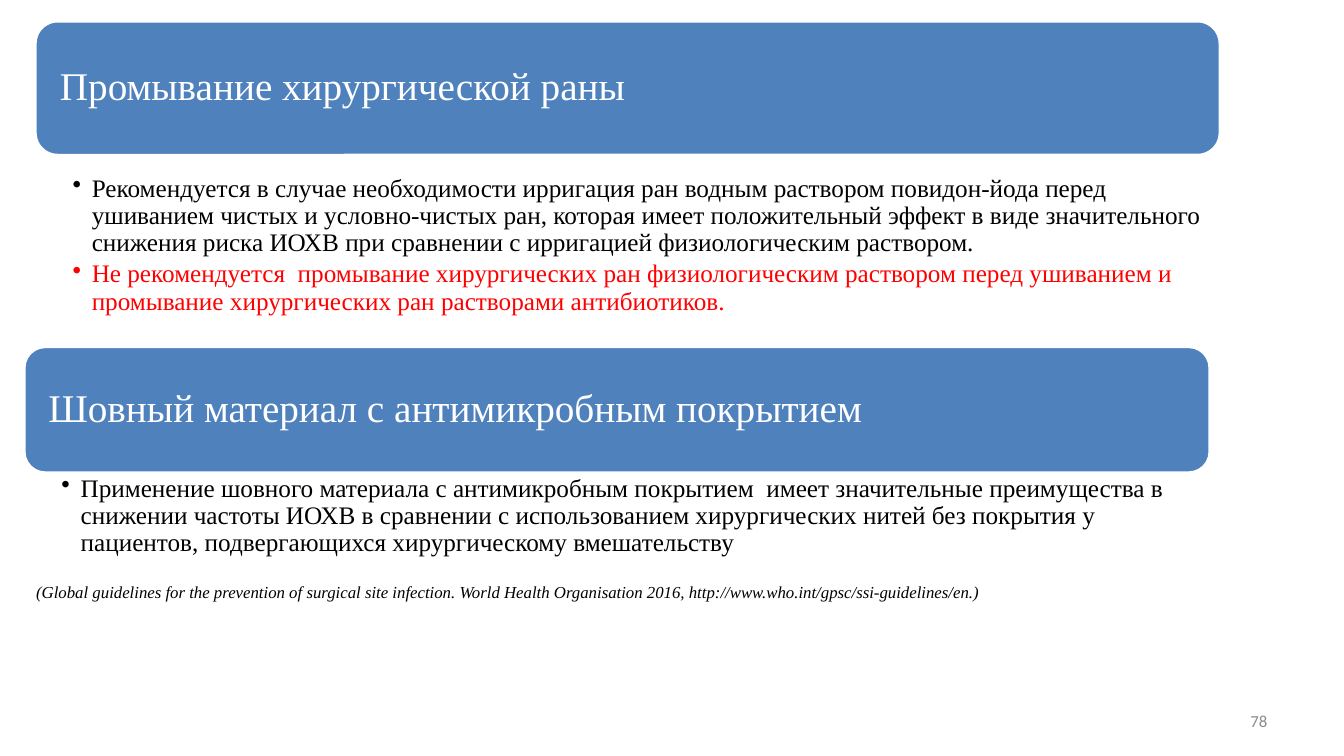
from lxml import etree
from pptx import Presentation
from pptx import util as u
from pptx.dml.color import RGBColor
from pptx.enum import shapes, text
from pptx.oxml.ns import qn

PX = 9144
COLORS = {"banner": "4F81BD", "white": "FFFFFF", "advice": "000000",
          "warning": "FF0000", "number": "8C8C8C"}
SERIF = "Times New Roman"


def px(length):
    return u.Emu(length * PX)


def color(name):
    return RGBColor.from_string(COLORS[name])


def add_run(paragraph, words, size, tone, face=SERIF, italic=False):
    run = paragraph.add_run()
    run.text = words
    run.font.size = u.Pt(size)
    run.font.name = face
    run.font.italic = italic
    run.font.color.rgb = color(tone)


def set_frame(frame, insets, anchor):
    frame.word_wrap = True
    frame.auto_size = text.MSO_AUTO_SIZE.NONE
    frame.vertical_anchor = anchor
    left, top, right, bottom = insets
    frame.margin_left, frame.margin_top = px(left), px(top)
    frame.margin_right, frame.margin_bottom = px(right), px(bottom)


def add_frame(slide, box, insets=(10, 5, 10, 5), anchor=text.MSO_ANCHOR.TOP):
    frame = slide.shapes.add_textbox(*map(px, box)).text_frame
    set_frame(frame, insets, anchor)
    return frame


def add_bullet(paragraph):
    props = paragraph._p.get_or_add_pPr()
    props.set("marL", str(px(19)))
    props.set("indent", str(-px(19)))
    etree.SubElement(props, qn("a:buChar")).set("char", "•")


def draw_banner(slide, box, title):
    banner = slide.shapes.add_shape(
        shapes.MSO_SHAPE.ROUNDED_RECTANGLE, *map(px, box))
    banner.shadow.inherit = False
    banner.fill.solid()
    banner.fill.fore_color.rgb = color("banner")
    banner.line.color.rgb = color("white")
    banner.line.width = u.Pt(2)
    set_frame(banner.text_frame, (18, 18, 18, 18), text.MSO_ANCHOR.MIDDLE)
    heading = banner.text_frame.paragraphs[0]
    heading.alignment = text.PP_ALIGN.LEFT
    heading.line_spacing = 0.9
    add_run(heading, title, 28, "white")


def draw_topic(slide, box, banner_height, gap, title, points):
    left, top, width, height = box
    draw_banner(slide, (left, top, width, banner_height), title)
    offset = banner_height + gap
    frame = add_frame(slide, (left, top + offset, width, height - offset),
                      (37, 3, 14, 3))
    for index, (tone, words) in enumerate(points):
        point = frame.add_paragraph() if index else frame.paragraphs[0]
        point.line_spacing = 0.9
        point.space_after = u.Pt(3)
        add_bullet(point)
        add_run(point, words, 18, tone)


def draw_citation(slide, box, words):
    citation = add_frame(slide, box).paragraphs[0]
    add_run(citation, words, 12, "advice", italic=True)


def draw_page_number(slide, box, number):
    page = add_frame(slide, box, anchor=text.MSO_ANCHOR.MIDDLE).paragraphs[0]
    page.alignment = text.PP_ALIGN.RIGHT
    add_run(page, number, 12, "number", face="Calibri")


def main():
    deck = Presentation()
    deck.slide_width, deck.slide_height = px(1333), px(750)
    slide = deck.slides.add_slide(deck.slide_layouts[6])
    draw_topic(slide, (35, 21, 1175, 293), 133, 17,
               "Промывание хирургической раны", [
                   ("advice", "Рекомендуется в случае необходимости ирригация "
                    "ран водным раствором повидон-йода перед ушиванием чистых "
                    "и условно-чистых ран, которая имеет положительный эффект "
                    "в виде значительного снижения риска ИОХВ при сравнении "
                    "с ирригацией физиологическим раствором."),
                   ("warning", "Не рекомендуется  промывание хирургических ран "
                    "физиологическим раствором перед ушиванием и промывание "
                    "хирургических ран растворами антибиотиков."),
               ])
    draw_topic(slide, (24, 344, 1176, 235), 125, 0,
               "Шовный материал с антимикробным покрытием", [
                   ("advice", "Применение шовного материала с антимикробным "
                    "покрытием  имеет значительные преимущества в снижении "
                    "частоты ИОХВ в сравнении с использованием хирургических "
                    "нитей без покрытия у пациентов, подвергающихся "
                    "хирургическому вмешательству"),
               ])
    draw_citation(slide, (26, 572, 1155, 30),
                  "(Global guidelines for the prevention of surgical site "
                  "infection. World Health Organisation 2016, "
                  "http://www.who.int/gpsc/ssi-guidelines/en.)")
    draw_page_number(slide, (956, 695, 311, 40), "78")
    deck.save("out.pptx")


if __name__ == "__main__":
    main()
